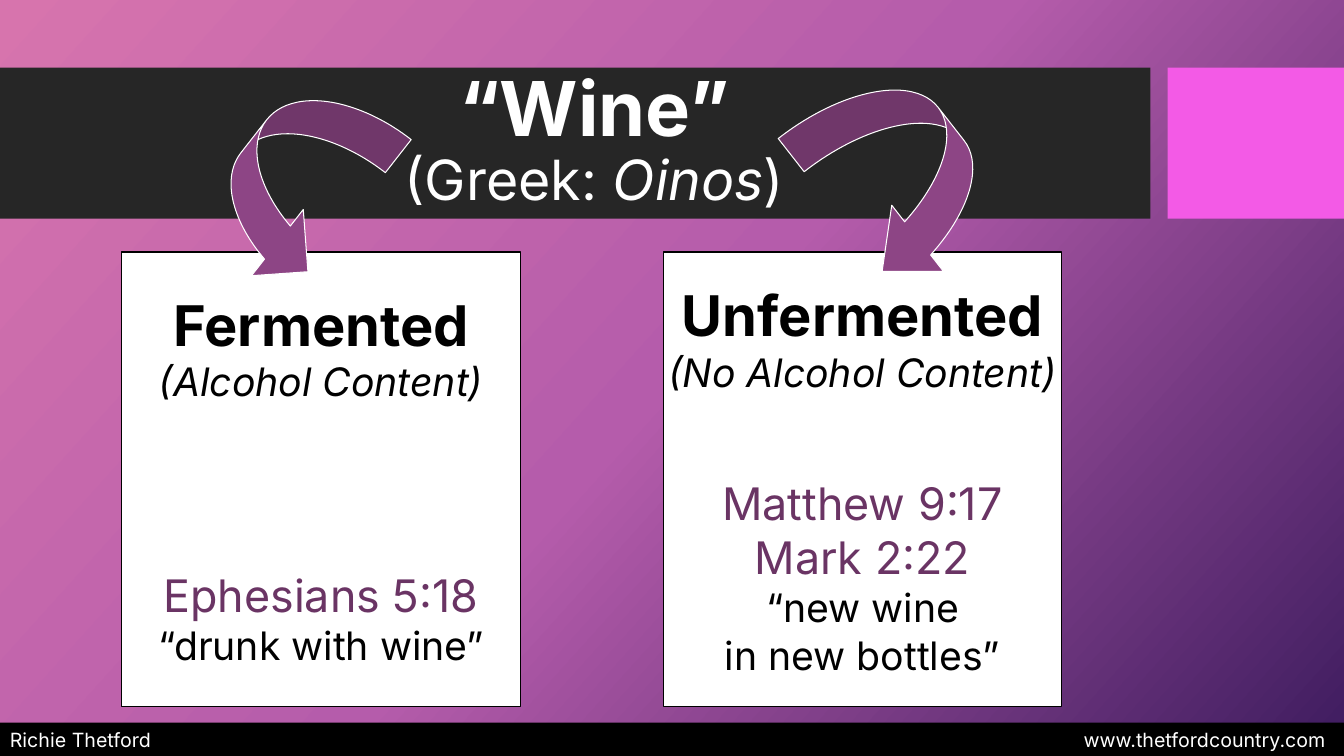
from lxml import etree
from pptx import Presentation
from pptx.dml.color import RGBColor
from pptx.enum.shapes import MSO_SHAPE as SHAPE
from pptx.enum.text import MSO_ANCHOR as ANCHOR, PP_ALIGN as ALIGN
from pptx.oxml.ns import qn
from pptx.util import Inches, Pt

COLORS = {
    "pink": "D774AD", "orchid": "B55CAB", "indigo": "3E1C5F",
    "charcoal": "262626", "magenta": "F35AE6", "black": "000000",
    "white": "FFFFFF", "plum": "6A3464", "arrow": "8D4585",
}


def add_shape(kind, box, fill, line=None):
    sp = s.shapes.add_shape(kind, *[Inches(v) for v in box])
    sp.shadow.inherit = False
    sp.fill.solid()
    sp.fill.fore_color.rgb = RGBColor.from_string(COLORS[fill])
    if line:
        sp.line.color.rgb = RGBColor.from_string(COLORS[line])
        sp.line.width = Pt(0.75)
    else:
        sp.line.fill.background()
    return sp


def set_font(font, color, size=None, bold=None, italic=None):
    font.name = "Inter"
    font.color.rgb = RGBColor.from_string(COLORS[color])
    font.size = Pt(size) if size else None
    font.bold, font.italic = bold, italic


prs = Presentation()
prs.slide_width, prs.slide_height = Inches(13.33), Inches(7.5)
s = prs.slides.add_slide(prs.slide_layouts[6])

# Background gradient
bg = s.background.fill
bg.gradient()
bg.gradient_angle = 360 - 42
stops = s.element.find(".//" + qn("a:gsLst"))
for stop in list(stops):
    stops.remove(stop)
for percent, name in [(0, "pink"), (50, "orchid"), (100, "indigo")]:
    stop = etree.SubElement(stops, qn("a:gs"), pos=str(percent * 1000))
    etree.SubElement(stop, qn("a:srgbClr"), val=COLORS[name])

# Title band and footer
add_shape(SHAPE.RECTANGLE, (0, 0.67, 11.41, 1.5), "charcoal")
add_shape(SHAPE.RECTANGLE, (11.58, 0.67, 1.75, 1.5), "magenta")
footer = add_shape(SHAPE.RECTANGLE, (0, 7.17, 13.33, 0.34), "black")
tf = footer.text_frame
tf.vertical_anchor = ANCHOR.MIDDLE
p = tf.paragraphs[0]
p.text = "Richie Thetford\twww.thetfordcountry.com"
p.alignment = ALIGN.LEFT
tabs = etree.SubElement(p._p.get_or_add_pPr(), qn("a:tabLst"))
etree.SubElement(tabs, qn("a:tab"), pos=str(Inches(13.05)), algn="r")
set_font(p.font, "white", 14)

# Title
title = s.shapes.add_textbox(Inches(3.87), Inches(0.82), Inches(4.05), Inches(1.18))
tf = title.text_frame
tf.word_wrap = True
tf.vertical_anchor = ANCHOR.MIDDLE
p = tf.paragraphs[0]
p.alignment = ALIGN.CENTER
p.line_spacing = 0.9
for text, size, bold, italic in [
    ("“Wine”", 54, True, False),
    ("(Greek: ", 39.6, False, False),
    ("Oinos", 39.6, False, True),
    (")", 39.6, False, False),
]:
    r = p.add_run()
    r.text = text
    set_font(r.font, "white", size, bold, italic)
    if bold:
        p.add_line_break()

# Cards: left edge, gap above the verses in points, heading, subheading, verses, quote
cards = [
    (1.21, 116, "Fermented", "(Alcohol Content)",
     ["Ephesians 5:18"], "“drunk with wine”"),
    (6.58, 58, "Unfermented", "(No Alcohol Content)",
     ["Matthew 9:17", "Mark 2:22"], "“new wine\vin new bottles”"),
]
for left, gap, heading, subheading, verses, quote in cards:
    card = add_shape(SHAPE.RECTANGLE, (left, 2.5, 3.95, 4.51), "white", "black")
    tf = card.text_frame
    tf.word_wrap = False
    tf.vertical_anchor = ANCHOR.MIDDLE
    lines = [(heading, "black", 40, True, False), (subheading, "black", 28, False, True)]
    lines += [(verse, "plum", 32, False, False) for verse in verses]
    lines.append((quote, "black", 28, False, False))
    for i, (text, *style) in enumerate(lines):
        p = tf.add_paragraph() if i else tf.paragraphs[0]
        p.text = text
        p.alignment = ALIGN.CENTER
        if text == verses[0]:
            p.space_before = Pt(gap)
        set_font(p.font, *style)

# Curved arrows from the title to the cards
for box, rotation, adjustments, flip in [
    ((2.32, 0.78, 1.25, 2.08), 38, (0.333, 0.667, 0.333), False),
    ((8.21, 0.71, 1.44, 2.09), 322, (0.29, 0.579, 0.333), True),
]:
    arrow = add_shape(SHAPE.CURVED_RIGHT_ARROW, box, "arrow", "white")
    arrow.rotation = rotation
    for i, value in enumerate(adjustments):
        arrow.adjustments[i] = value
    if flip:
        arrow.element.spPr.find(qn("a:xfrm")).set("flipH", "1")

prs.save("out.pptx")
